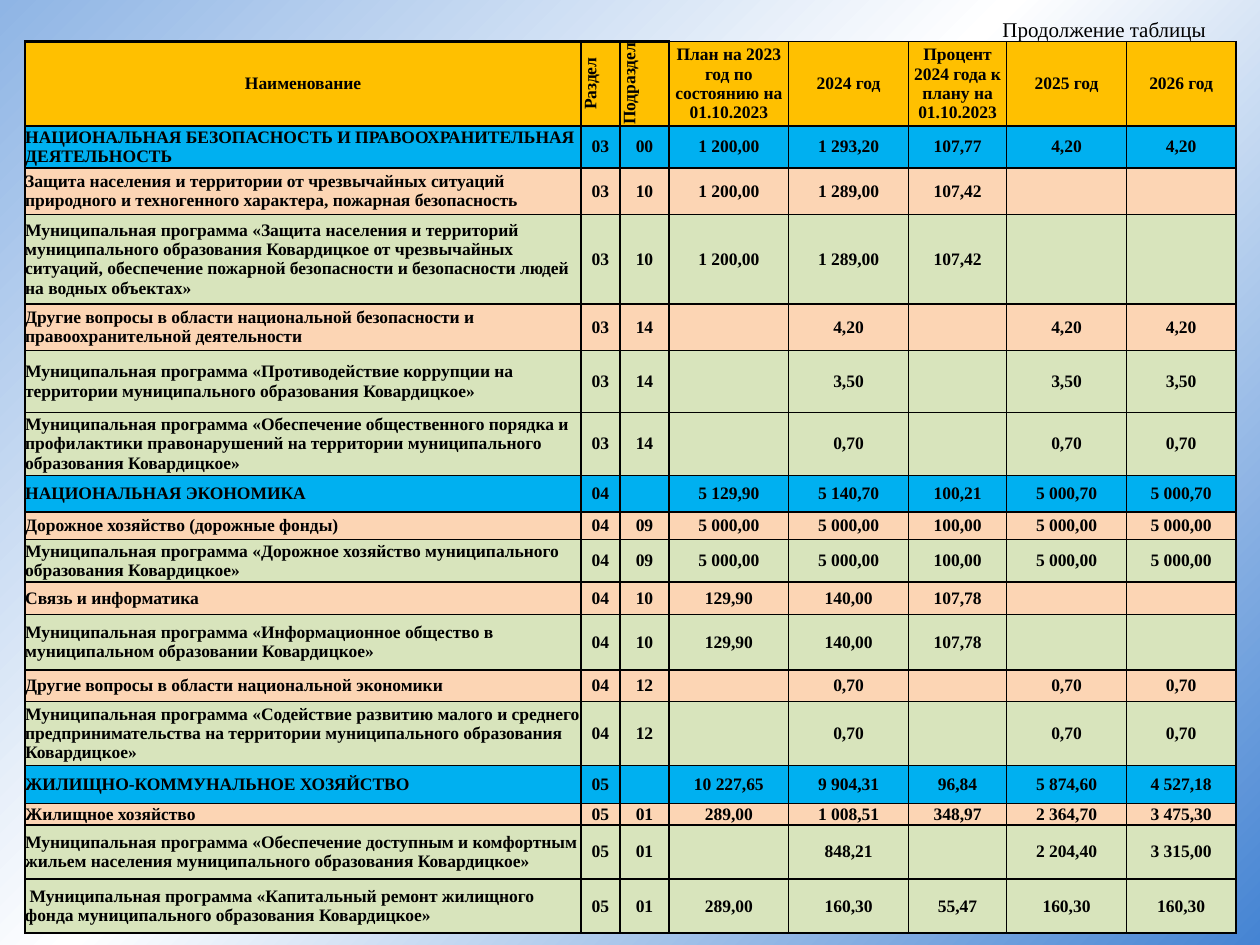
from pptx import Presentation
from pptx.dml.color import RGBColor
from pptx.enum.text import MSO_ANCHOR as Anchor, MSO_AUTO_SIZE as AutoSize, PP_ALIGN as Align
from pptx.oxml import parse_xml
from pptx.oxml.ns import nsdecls, qn
from pptx.util import Inches, Pt
from lxml.etree import SubElement

FONT = "Times New Roman"
BLACK = "000000"
HEADER_FILL = "FFC000"
FILLS = {"section": "00B0F0", "group": "FCD5B4", "program": "D8E4BC"}
GRADIENT = [(0, "4584D3"), (54, "FFFFFF"), (100, "8FB5E5")]
COL_WIDTHS = [4.41, 0.31, 0.39, 0.95, 0.95, 0.78, 0.95, 0.87]
HEADER_HEIGHT = 0.67
HEADERS = ["Наименование", "Раздел", "Подраздел", "План на 2023 год по состоянию на 01.10.2023",
           "2024 год", "Процент 2024 года к плану на 01.10.2023", "2025 год", "2026 год"]
ROWS = [
    ("section", 0.33, "НАЦИОНАЛЬНАЯ БЕЗОПАСНОСТЬ И ПРАВООХРАНИТЕЛЬНАЯ ДЕЯТЕЛЬНОСТЬ",
     "03|00|1 200,00|1 293,20|107,77|4,20|4,20"),
    ("group", 0.37, "Защита населения и территории от чрезвычайных ситуаций природного и техногенного "
     "характера, пожарная безопасность", "03|10|1 200,00|1 289,00|107,42||"),
    ("program", 0.71, "Муниципальная программа «Защита населения и территорий муниципального образования "
     "Ковардицкое от чрезвычайных ситуаций, обеспечение пожарной безопасности и безопасности людей "
     "на водных объектах»", "03|10|1 200,00|1 289,00|107,42||"),
    ("group", 0.37, "Другие вопросы в области национальной безопасности и правоохранительной деятельности",
     "03|14||4,20||4,20|4,20"),
    ("program", 0.49, "Муниципальная программа «Противодействие коррупции на территории муниципального "
     "образования Ковардицкое»", "03|14||3,50||3,50|3,50"),
    ("program", 0.5, "Муниципальная программа «Обеспечение общественного порядка и профилактики "
     "правонарушений на территории муниципального образования Ковардицкое»", "03|14||0,70||0,70|0,70"),
    ("section", 0.29, "НАЦИОНАЛЬНАЯ ЭКОНОМИКА", "04||5 129,90|5 140,70|100,21|5 000,70|5 000,70"),
    ("group", 0.22, "Дорожное хозяйство (дорожные фонды)",
     "04|09|5 000,00|5 000,00|100,00|5 000,00|5 000,00"),
    ("program", 0.33, "Муниципальная программа «Дорожное хозяйство муниципального образования Ковардицкое»",
     "04|09|5 000,00|5 000,00|100,00|5 000,00|5 000,00"),
    ("group", 0.26, "Связь и информатика", "04|10|129,90|140,00|107,78||"),
    ("program", 0.44, "Муниципальная программа «Информационное общество в муниципальном образовании "
     "Ковардицкое»", "04|10|129,90|140,00|107,78||"),
    ("group", 0.25, "Другие вопросы в области национальной экономики", "04|12||0,70||0,70|0,70"),
    ("program", 0.51, "Муниципальная программа «Содействие развитию малого и среднего предпринимательства "
     "на территории муниципального образования Ковардицкое»", "04|12||0,70||0,70|0,70"),
    ("section", 0.3, "ЖИЛИЩНО-КОММУНАЛЬНОЕ ХОЗЯЙСТВО", "05||10 227,65|9 904,31|96,84|5 874,60|4 527,18"),
    ("group", 0.17, "Жилищное хозяйство", "05|01|289,00|1 008,51|348,97|2 364,70|3 475,30"),
    ("program", 0.43, "Муниципальная программа «Обеспечение доступным и комфортным жильем населения "
     "муниципального образования Ковардицкое»", "05|01||848,21||2 204,40|3 315,00"),
    ("program", 0.43, " Муниципальная программа «Капитальный ремонт жилищного фонда муниципального "
     "образования Ковардицкое»", "05|01|289,00|160,30|55,47|160,30|160,30"),
]


def color(value):
    return RGBColor.from_string(value)


def set_background(s):
    s.background.fill.gradient()
    old = next(s.background._cSld.iter(qn("a:gradFill")))
    stops = "".join(f'<a:gs pos="{pos * 1000}"><a:srgbClr val="{value}"/></a:gs>' for pos, value in GRADIENT)
    new = parse_xml(
        f'<a:gradFill {nsdecls("a")} rotWithShape="1"><a:gsLst>{stops}</a:gsLst>'
        '<a:path path="circle"><a:fillToRect l="100000" t="100000"/></a:path></a:gradFill>')
    old.getparent().replace(old, new)


def add_text(p, text, size, bold=False):
    r = p.add_run()
    r.text = text
    r.font.name = FONT
    r.font.size = Pt(size)
    r.font.bold = bold
    r.font.color.rgb = color(BLACK)


def add_caption(s, text):
    sp = s.shapes.add_textbox(Inches(7.76), Inches(0.13), Inches(1.91), Inches(0.2))
    tf = sp.text_frame
    tf.word_wrap = True
    tf.auto_size = AutoSize.SHAPE_TO_FIT_TEXT
    tf.margin_top = tf.margin_bottom = 0
    p = tf.paragraphs[0]
    p.alignment = Align.RIGHT
    add_text(p, text, 12)


def add_borders(cell, thick_sides):
    tcPr = cell._tc.get_or_add_tcPr()
    for side in "LRTB":
        width = 1.5 if side in thick_sides else 1
        ln = SubElement(tcPr, qn(f"a:ln{side}"), w=str(Pt(width)))
        SubElement(SubElement(ln, qn("a:solidFill")), qn("a:srgbClr"), val=BLACK)


def fill_cell(cell, text, fill, align, thick_sides=""):
    cell.margin_left = cell.margin_right = cell.margin_top = cell.margin_bottom = 0
    cell.vertical_anchor = Anchor.MIDDLE
    add_borders(cell, thick_sides)
    cell.fill.solid()
    cell.fill.fore_color.rgb = color(fill)
    p = cell.text_frame.paragraphs[0]
    p.alignment = align
    if text:
        add_text(p, text, 10, True)
    else:
        SubElement(p._p, qn("a:endParaRPr"), sz="1000")


def add_budget_table(s):
    heights = [HEADER_HEIGHT] + [height for _, height, _, _ in ROWS]
    table = s.shapes.add_table(len(heights), len(COL_WIDTHS), Inches(0.2), Inches(0.33),
                               Inches(sum(COL_WIDTHS)), Inches(sum(heights))).table
    table.first_row = table.horz_banding = False
    for col, width in zip(table.columns, COL_WIDTHS):
        col.width = Inches(width)
    for row, height in zip(table.rows, heights):
        row.height = Inches(height)
    thick = ["LTR", "LTR", "LT"]
    for c, text in enumerate(HEADERS):
        cell = table.cell(0, c)
        fill_cell(cell, text, HEADER_FILL, Align.CENTER, thick[c] if c < len(thick) else "")
        if c in (1, 2):
            cell._tc.get_or_add_tcPr().set("vert", "vert270")
    for i, (kind, _, name, values) in enumerate(ROWS, 1):
        for c, text in enumerate([name] + values.split("|")):
            fill_cell(table.cell(i, c), text, FILLS[kind], Align.CENTER if c else Align.LEFT)


def main():
    prs = Presentation()
    prs.slide_width, prs.slide_height = Inches(10), Inches(7.5)
    s = prs.slides.add_slide(prs.slide_layouts[6])
    set_background(s)
    add_caption(s, "Продолжение таблицы")
    add_budget_table(s)
    prs.save("out.pptx")


if __name__ == "__main__":
    main()
